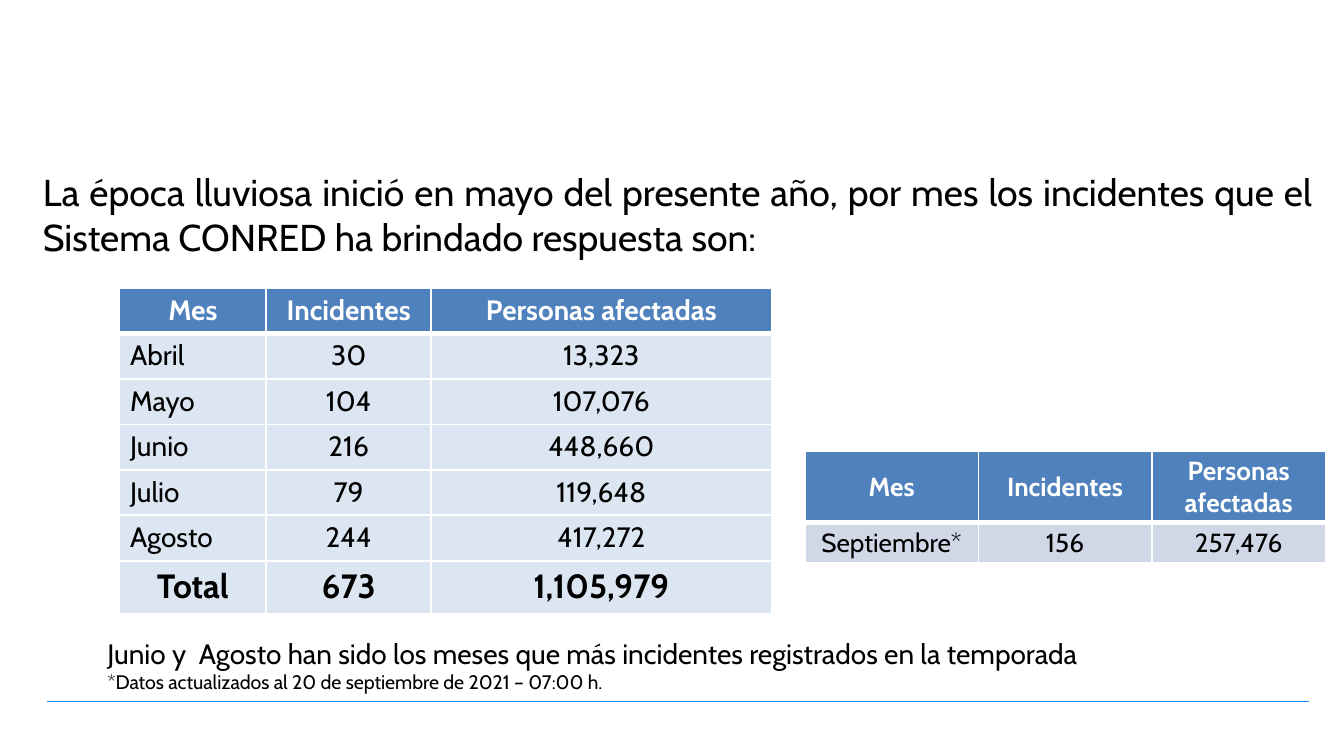
from lxml import etree
from pptx import Presentation
from pptx.dml.color import RGBColor
from pptx.enum.shapes import MSO_CONNECTOR
from pptx.enum.text import MSO_ANCHOR as ANCHOR, PP_ALIGN as ALIGN
from pptx.oxml.ns import qn
from pptx.util import Cm, Pt

FONT = "Cabin"
BLACK, WHITE, BLUE, RULE = "000000", "FFFFFF", "4F81BD", "178FFC"
PALE, GREY = "DCE6F2", "D0D8E8"

MONTHS = [
    ("Mes", "Incidentes", "Personas afectadas"),
    ("Abril", "30", "13,323"),
    ("Mayo", "104", "107,076"),
    ("Junio", "216", "448,660"),
    ("Julio", "79", "119,648"),
    ("Agosto", "244", "417,272"),
    ("Total", "673", "1,105,979"),
]
SEPTEMBER = [MONTHS[0], ("Septiembre*", "156", "257,476")]


def rgb(value):
    return RGBColor.from_string(value)


def write(p, text, size, color=BLACK, bold=False, align=ALIGN.LEFT):
    p.alignment = align
    r = p.add_run()
    r.text = text
    fmt = {"name": FONT, "size": Pt(size), "bold": bold}
    for name, value in fmt.items():
        setattr(r.font, name, value)
    r.font.color.rgb = rgb(color)


def add_box(slide, box):
    tf = slide.shapes.add_textbox(*map(Cm, box)).text_frame
    tf.word_wrap = True
    return tf


def add_borders(cell, widths):
    """Draw white borders; widths maps a side (L, R, T, B) to points."""
    tcPr = cell._tc.get_or_add_tcPr()
    for side, width in widths.items():
        ln = etree.SubElement(tcPr, qn(f"a:ln{side}"), w=str(Pt(width)))
        fill = etree.SubElement(ln, qn("a:solidFill"))
        etree.SubElement(fill, qn("a:srgbClr"), val=WHITE)


def add_data_table(slide, rows, left, top, widths, heights, size, body, pad,
                   anchor=ANCHOR.TOP, left_rows=(), total=None):
    """Header row plus body; left_rows align their first cell left."""
    frame = slide.shapes.add_table(len(rows), len(widths), Cm(left), Cm(top),
                                   Cm(sum(widths)), Cm(sum(heights)))
    table = frame.table
    for column, width in zip(table.columns, widths):
        column.width = Cm(width)
    for i, (row, height) in enumerate(zip(rows, heights)):
        table.rows[i].height = Cm(height)
        header = i == 0
        for j, text in enumerate(row):
            cell = table.cell(i, j)
            add_borders(cell, {"L": 1, "R": 1, "T": 3 if i == 1 else 1,
                               "B": 3 if header else 1})
            cell.fill.solid()
            cell.fill.fore_color.rgb = rgb(BLUE if header else body)
            fmt = {"margin_left": Cm(2 * pad), "margin_right": Cm(2 * pad),
                   "margin_top": Cm(pad), "margin_bottom": Cm(pad),
                   "vertical_anchor": anchor}
            for name, value in fmt.items():
                setattr(cell, name, value)
            to_left = j == 0 and i in left_rows
            write(cell.text_frame.paragraphs[0], text,
                  18 if i == total else size, WHITE if header else BLACK,
                  header or i == total, ALIGN.LEFT if to_left else ALIGN.CENTER)


def add_footer_rule(slide, left, right, y):
    line = slide.shapes.add_connector(MSO_CONNECTOR.STRAIGHT, Cm(left), Cm(y),
                                      Cm(right), Cm(y))
    line.line.color.rgb = rgb(RULE)
    line.line.width = Pt(0.25)
    etree.SubElement(line._element.spPr, qn("a:effectLst"))


def add_intro(slide, box):
    write(add_box(slide, box).paragraphs[0],
          "La época lluviosa inició en mayo del presente año, por mes los "
          "incidentes que el Sistema CONRED ha brindado respuesta son:",
          20, align=ALIGN.JUSTIFY)


def add_notes(slide, box):
    tf = add_box(slide, box)
    write(tf.paragraphs[0], "Junio y  Agosto han sido los meses que más "
          "incidentes registrados en la temporada", 15)
    write(tf.add_paragraph(),
          "*Datos actualizados al 20 de septiembre de 2021 – 07:00 h.", 10.5)


def main():
    prs = Presentation()
    prs.slide_width, prs.slide_height = Cm(25.4), Cm(14.29)
    slide = prs.slides.add_slide(prs.slide_layouts[6])
    add_footer_rule(slide, 0.89, 24.74, 13.26)
    add_intro(slide, (0.56, 3.07, 24.51, 2))
    add_data_table(slide, MONTHS, 2.26, 5.44, (2.77, 3.12, 6.43),
                   [0.86] * 6 + [1], 15, PALE, 0.1,
                   left_rows=range(1, 6), total=6)
    add_notes(slide, (1.78, 11.91, 23.5, 1.5))
    add_data_table(slide, SEPTEMBER, 15.21, 8.53, [3.28] * 3, (1.32, 0.74),
                   14, GREY, 0.08, anchor=ANCHOR.MIDDLE)
    prs.save("out.pptx")


if __name__ == "__main__":
    main()
